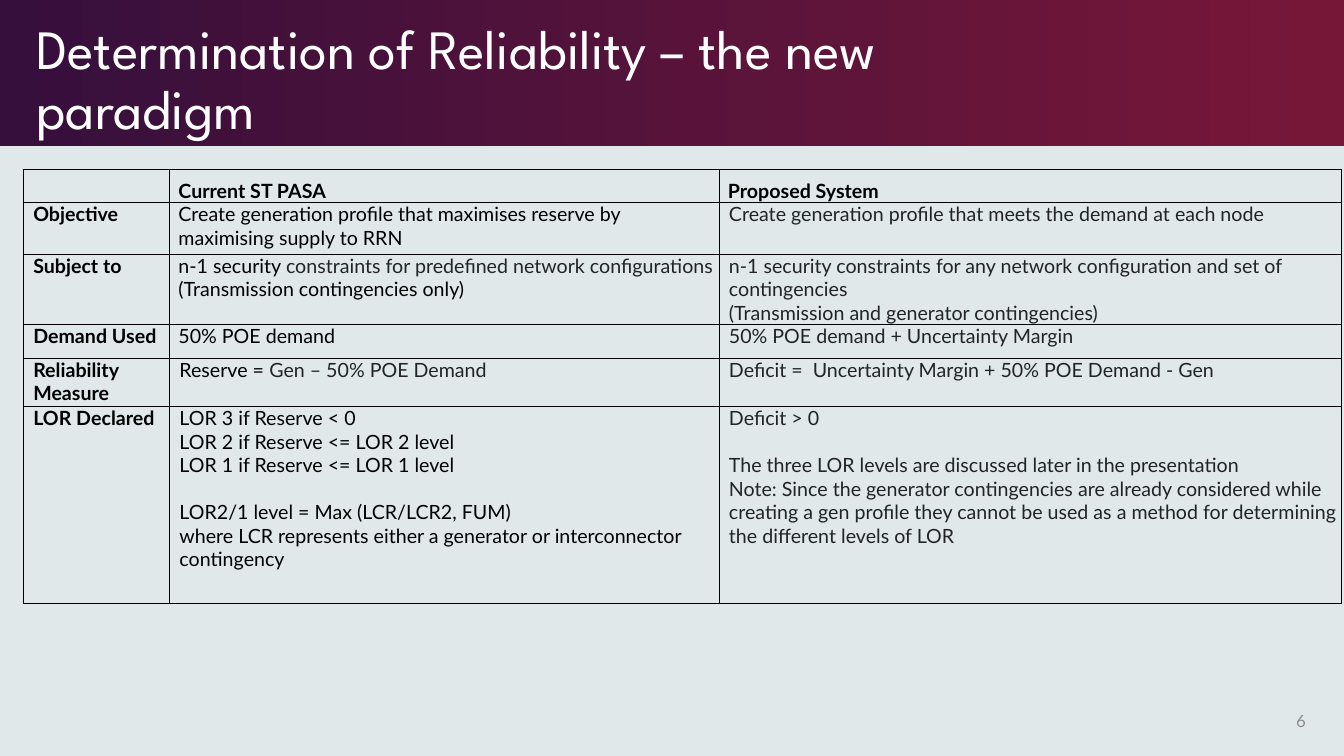
from lxml.etree import SubElement
from pptx import Presentation
from pptx.dml.color import RGBColor
from pptx.enum.shapes import MSO_SHAPE
from pptx.enum.text import MSO_ANCHOR, MSO_AUTO_SIZE, PP_ALIGN
from pptx.oxml.ns import qn
from pptx.util import Inches, Pt

BLACK, DARK = "000000", "222324"


def paint(color, shade):
    color.rgb = RGBColor.from_string(shade)


def style(font, size, shade, name="Lato", bold=False):
    font.name, font.size, font.bold = name, Pt(size), bold
    paint(font.color, shade)


deck = Presentation()
deck.slide_width, deck.slide_height = Inches(13.33), Inches(7.5)
slide = deck.slides.add_slide(deck.slide_layouts[5])
slide.background.fill.solid()
paint(slide.background.fill.fore_color, "E0E8EA")

# Title band, kept behind the title
band = slide.shapes.add_shape(MSO_SHAPE.RECTANGLE, 0, 0, deck.slide_width, Inches(1.45))
band.shadow.inherit = False
band.line.fill.background()
band.fill.gradient()
band.fill.gradient_angle = 0
for stop, (place, shade) in zip(band.fill.gradient_stops, [(0, "360F3C"), (0.99, "771738")]):
    stop.position = place
    paint(stop.color, shade)
title = slide.shapes.title
band._element.addnext(title._element)

# Title
title.left, title.top, title.width, title.height = map(Inches, (0.26, 0.15, 9.84, 1.3))
frame = title.text_frame
frame.text = "Determination of Reliability – the new paradigm"
frame.auto_size = MSO_AUTO_SIZE.NONE
frame.word_wrap = True
frame.vertical_anchor = MSO_ANCHOR.BOTTOM
head = frame.paragraphs[0]
head.alignment, head.line_spacing = PP_ALIGN.LEFT, 0.9
style(head.runs[0].font, 39.6, "FFFFFF", "League Spartan")

# Page number
box = slide.shapes.add_textbox(*map(Inches, (12.42, 6.95, 0.63, 0.4)))
frame = box.text_frame
frame.text = "6"
frame.word_wrap = True
frame.vertical_anchor = MSO_ANCHOR.MIDDLE
frame.paragraphs[0].alignment = PP_ALIGN.RIGHT
style(frame.paragraphs[0].runs[0].font, 12, "8D8D8E")

# Table text: a cell lists its paragraphs, "|" turns to the dark grey, "\n" breaks a line
rows = [
    (0.33, [], ["Current ST PASA"], ["Proposed System"]),
    (0.51, ["Objective"],
     ["Create generation profile that maximises reserve by maximising supply to RRN"],
     ["|Create generation profile that meets the demand at each node"]),
    (0.49, ["Subject to"],
     ["n-1 security |constraints for predefined network configurations"
      "|\n(Transmission contingencies only)"],
     ["|n-1 security constraints for any network configuration and set of contingencies\n"
      "(Transmission and generator contingencies)"]),
    (0.33, ["Demand Used"], ["50% POE demand"], ["|50% POE demand + Uncertainty Margin"]),
    (0.48, ["Reliability Measure"], ["Reserve = |Gen – 50% POE Demand"],
     ["|Deficit =  Uncertainty Margin + 50% POE Demand - Gen"]),
    (1.96, ["LOR Declared"],
     ["LOR 3 if Reserve < 0\nLOR 2 if Reserve <= LOR 2 level\nLOR 1 if Reserve <= LOR 1 level",
      "LOR2/1 level = Max (LCR/LCR2, FUM)\n"
      "where LCR represents either a generator or interconnector contingency"],
     ["|Deficit > 0",
      "|The three LOR levels are discussed later in the presentation\n"
      "Note: Since the generator contingencies are already considered while creating a gen "
      "profile they cannot be used as a method for determining the different levels of LOR"]),
]
widths = [1.45, 5.45, 6.17]

# Table
table = slide.shapes.add_table(
    len(rows), len(widths), *map(Inches, (0.23, 1.68, sum(widths), 4.1))).table
table.first_row = table.horz_banding = False
for col, width in zip(table.columns, widths):
    col.width = Inches(width)
for r, (height, *texts) in enumerate(rows):
    table.rows[r].height = Inches(height)
    for c, text in enumerate(texts):
        cell = table.cell(r, c)
        cell.margin_top = cell.margin_right = cell.margin_bottom = 0
        cell.margin_left = Inches(0.09 if c == 1 and r < 4 or r == 0 else 0.1)
        cell.vertical_anchor = MSO_ANCHOR.TOP if r else MSO_ANCHOR.BOTTOM

        # Borders come before the fill
        props = cell._tc.get_or_add_tcPr()
        for side in ("lnL", "lnR", "lnT", "lnB"):
            line = SubElement(props, qn(f"a:{side}"), w=str(Pt(0.5)))
            SubElement(SubElement(line, qn("a:solidFill")), qn("a:srgbClr"), val=BLACK)
        cell.fill.background()

        # Paragraphs, with one line of space between them
        for n, words in enumerate(text):
            para = cell.text_frame.add_paragraph() if n else cell.text_frame.paragraphs[0]
            if n:
                para.space_before = Pt(16.8)
            for k, part in enumerate(words.split("|")):
                for m, piece in enumerate(part.split("\n")):
                    if m:
                        para.add_line_break()
                    if piece:
                        run = para.add_run()
                        run.text = piece
                        style(run.font, 14, DARK if k % 2 else BLACK, bold=r == 0 or c == 0)
            for gap in para._p.findall(qn("a:br")):
                SubElement(gap, qn("a:rPr"), sz="1400")

deck.save("out.pptx")
